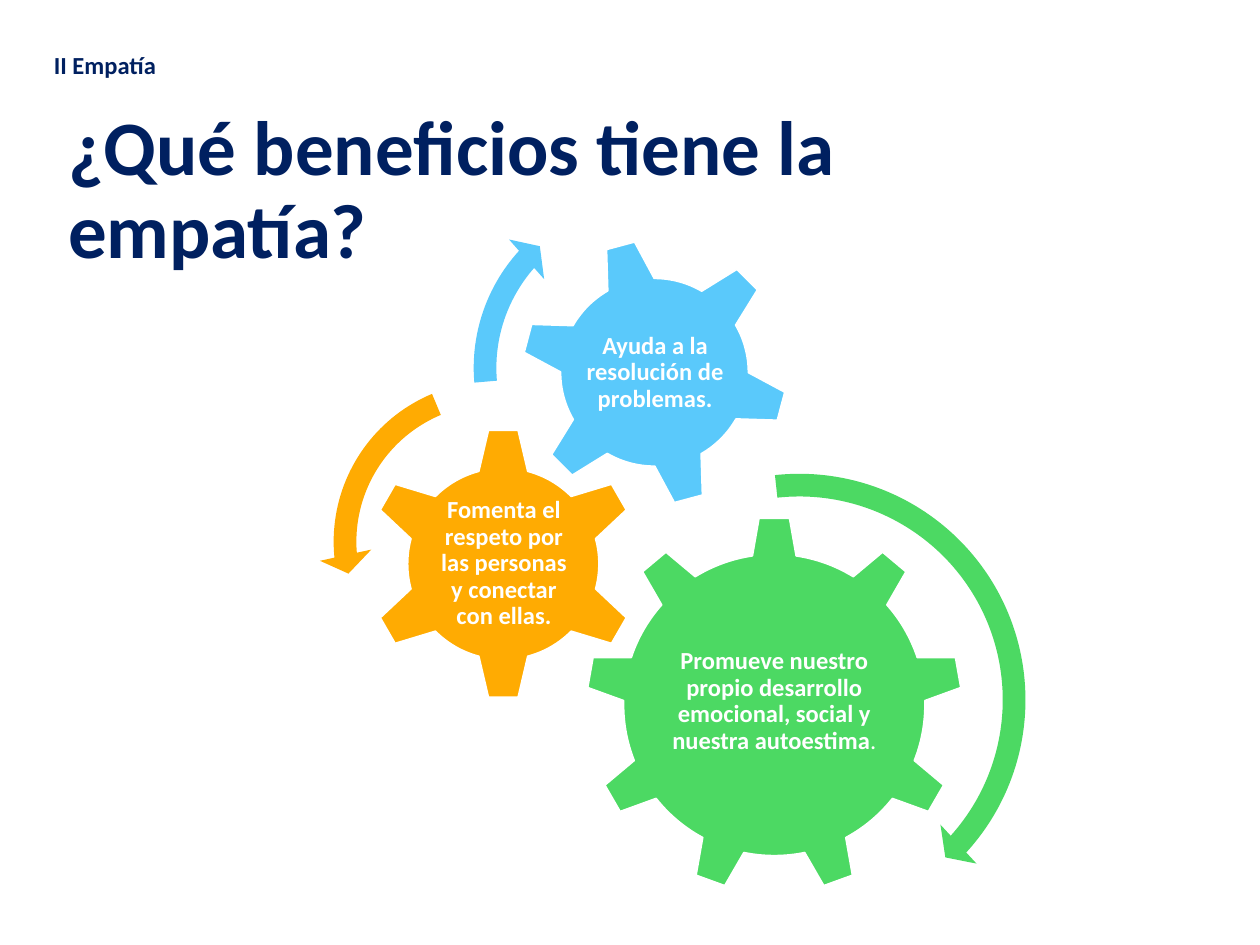
from dataclasses import dataclass

from pptx import Presentation
from pptx.dml.color import RGBColor
from pptx.enum.shapes import MSO_SHAPE
from pptx.enum.text import MSO_ANCHOR, MSO_AUTO_SIZE, PP_ALIGN
from pptx.util import Inches, Pt


@dataclass(frozen=True)
class Theme:
    font: str = "Calibri"
    navy: RGBColor = RGBColor(0x00, 0x20, 0x60)
    white: RGBColor = RGBColor(0xFF, 0xFF, 0xFF)
    green: RGBColor = RGBColor(0x4C, 0xD9, 0x63)
    orange: RGBColor = RGBColor(0xFF, 0xAB, 0x02)
    blue: RGBColor = RGBColor(0x5A, 0xC9, 0xFB)
    title_size: Pt = Pt(44)
    text_size: Pt = Pt(14)


THEME = Theme()
GEAR_MARGINS = {f"margin_{side}": Inches(0.02) for side in ("left", "top", "right", "bottom")}

GEARS = [
    (MSO_SHAPE.GEAR_9, (4.65, 4.1, 2.99), 0, THEME.green, (5.25, 4.8, 1.79, 1.54),
     [("Promueve nuestro propio desarrollo emocional, social y nuestra autoestima", True),
      (".", False)]),
    (MSO_SHAPE.GEAR_6, (2.91, 3.39, 2.17), 0, THEME.orange, (3.46, 3.94, 1.08, 1.07),
     [("Fomenta el respeto por las personas y conectar con ellas.", True)]),
    (MSO_SHAPE.GEAR_6, (4.13, 1.89, 2.13), 345, THEME.blue, (4.6, 2.36, 1.2, 1.2),
     [("Ayuda a la resolución de problemas.", True)]),
]

ARROWS = [
    (MSO_SHAPE.CIRCULAR_ARROW, (4.43, 3.64, 3.83), THEME.green,
     (0.047, 2.99, 25.32, 158.275, 0.055)),
    (MSO_SHAPE.LEFT_CIRCULAR_ARROW, (2.53, 2.91, 2.78), THEME.orange,
     (0.065, 4.3, 104.891, 148.378, 0.075)),
    (MSO_SHAPE.CIRCULAR_ARROW, (3.64, 1.42, 3), THEME.blue,
     (0.06, 3.941, 133.138, 105.082, 0.07)),
]


def apply_format(target, values):
    for name, value in values.items():
        setattr(target, name, value)


def write_text(box, spans, size, color, frame_format, para_format):
    frame = box.text_frame
    apply_format(frame, {"word_wrap": True, **frame_format})
    para = frame.paragraphs[0]
    apply_format(para, para_format)
    for text, bold in spans:
        span = para.add_run()
        span.text = text
        apply_format(span.font, {"name": THEME.font, "size": size, "bold": bold})
        span.font.color.rgb = color


def add_text(shapes, place, spans, color, frame_format, para_format):
    box = shapes.add_textbox(*map(Inches, place))
    write_text(box, spans, THEME.text_size, color, frame_format, para_format)


def add_title(page, text):
    title = page.shapes.title
    apply_format(title, {"left": Inches(0.44), "top": Inches(0.8),
                         "width": Inches(8.62), "height": Inches(1.45)})
    write_text(title, [(text, True)], THEME.title_size, THEME.navy,
               {"vertical_anchor": MSO_ANCHOR.MIDDLE, "auto_size": MSO_AUTO_SIZE.NONE},
               {"alignment": PP_ALIGN.LEFT, "line_spacing": 0.9})


def add_square_shape(shapes, kind, place, color):
    left, top, side = map(Inches, place)
    shape = shapes.add_shape(kind, left, top, side, side)
    shape.shadow.inherit = False
    shape.fill.solid()
    shape.fill.fore_color.rgb = color
    return shape


def add_gear(shapes, kind, place, rotation, color, text_place, spans):
    gear = add_square_shape(shapes, kind, place, color)
    gear.rotation = rotation
    gear.line.color.rgb = THEME.white
    gear.line.width = Pt(1)
    add_text(shapes, text_place, spans, THEME.white,
             {"vertical_anchor": MSO_ANCHOR.MIDDLE, **GEAR_MARGINS},
             {"alignment": PP_ALIGN.CENTER, "line_spacing": 0.9})


def add_arrow(shapes, kind, place, color, adjustments):
    arrow = add_square_shape(shapes, kind, place, color)
    arrow.line.fill.background()
    for index, value in enumerate(adjustments):
        arrow.adjustments[index] = value


def main():
    deck = Presentation()
    deck.slide_width, deck.slide_height = Inches(10), Inches(7.5)
    page = deck.slides.add_slide(deck.slide_layouts[5])
    add_title(page, "¿Qué beneficios tiene la empatía?")
    diagram = page.shapes.add_group_shape().shapes
    for gear in GEARS:
        add_gear(diagram, *gear)
    for arrow in ARROWS:
        add_arrow(diagram, *arrow)
    add_text(page.shapes, (0.33, 0.35, 4.94, 0.34), [("II Empatía", True)], THEME.navy,
             {"auto_size": MSO_AUTO_SIZE.SHAPE_TO_FIT_TEXT}, {})
    deck.save("out.pptx")


if __name__ == "__main__":
    main()
